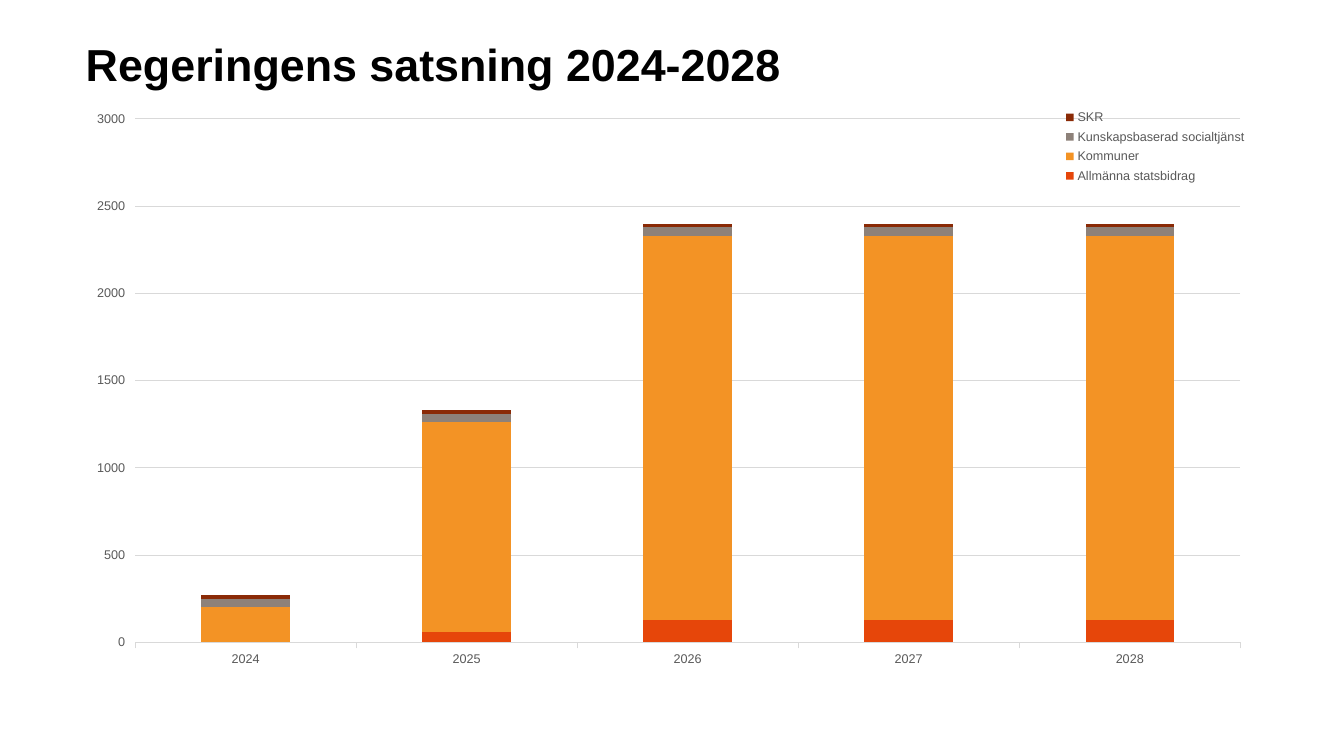
from lxml import etree
from pptx import Presentation
from pptx.chart.data import CategoryChartData
from pptx.dml.color import RGBColor
from pptx.enum.chart import XL_CHART_TYPE, XL_LEGEND_POSITION, XL_TICK_MARK
from pptx.enum.text import MSO_ANCHOR, MSO_AUTO_SIZE, PP_ALIGN
from pptx.oxml.ns import qn
from pptx.util import Inches, Pt

YEARS = ["2024", "2025", "2026", "2027", "2028"]
FUNDING = [
    ("Allmänna statsbidrag", "E6460A", [None, 60, 130, 130, 130]),
    ("Kommuner ", "F39325", [200, 1200, 2200, 2200, 2200]),
    ("Kunskapsbaserad socialtjänst", "8D8179", [50] * 5),
    ("SKR", "8A2A06", [20] * 5),
]


def rgb(color):
    return RGBColor.from_string(color)


def set_layout(owner, x, y, w, h, inner=False):
    """Place a plot area or legend by fractions of the chart's size."""
    layout = owner.find(qn("c:layout"))
    if layout is None:
        layout = etree.Element(qn("c:layout"))
        if inner:
            owner.insert(0, layout)
        else:
            owner.find(qn("c:legendPos")).addnext(layout)
    manual = etree.SubElement(layout, qn("c:manualLayout"))
    settings = [("layoutTarget", "inner")] if inner else []
    settings += [("xMode", "edge"), ("yMode", "edge"),
                 ("x", x), ("y", y), ("w", w), ("h", h)]
    for tag, value in settings:
        etree.SubElement(manual, qn(f"c:{tag}")).set("val", str(value))


class SlideBuilder:
    FONT = "Arial"
    INK = "000000"
    LABEL = "595959"
    RULE = "D9D9D9"

    def __init__(self, deck):
        self.slide = deck.slides.add_slide(deck.slide_layouts[5])

    def style_font(self, font, size, color, bold=False):
        font.name, font.size, font.bold = self.FONT, Pt(size), bold
        font.color.rgb = rgb(color)

    def style_rule(self, line):
        line.color.rgb = rgb(self.RULE)
        line.width = Pt(0.75)

    def title(self, text, left, top, width, height):
        heading = self.slide.shapes.title
        heading.left, heading.top = Inches(left), Inches(top)
        heading.width, heading.height = Inches(width), Inches(height)
        frame = heading.text_frame
        frame.text = text
        frame.word_wrap = True
        frame.auto_size = MSO_AUTO_SIZE.NONE
        frame.vertical_anchor = MSO_ANCHOR.TOP
        paragraph = frame.paragraphs[0]
        paragraph.alignment = PP_ALIGN.LEFT
        paragraph.line_spacing = 0.95
        self.style_font(paragraph.font, 32, self.INK, bold=True)

    def stacked_columns(self, categories, series, left, top, width, height):
        data = CategoryChartData()
        data.categories = categories
        for name, _, values in series:
            data.add_series(name, values)
        chart = self.slide.shapes.add_chart(
            XL_CHART_TYPE.COLUMN_STACKED, Inches(left), Inches(top),
            Inches(width), Inches(height), data).chart
        chart.has_title = False
        self.style_font(chart.font, 10, self.INK)

        plot = chart.plots[0]
        plot.gap_width, plot.overlap = 150, 100
        plot.vary_by_categories = False
        for bars, (_, color, _) in zip(plot.series, series):
            bars.format.fill.solid()
            bars.format.fill.fore_color.rgb = rgb(color)

        years, amounts = chart.category_axis, chart.value_axis
        for axis in (years, amounts):
            self.style_font(axis.tick_labels.font, 9, self.LABEL)
            axis.major_tick_mark = XL_TICK_MARK.OUTSIDE
        self.style_rule(years.format.line)
        amounts.format.line.fill.background()
        amounts.minimum_scale, amounts.maximum_scale = 0, 3000
        amounts.major_unit = 500
        amounts.has_major_gridlines = True
        self.style_rule(amounts.major_gridlines.format.line)

        chart.has_legend = True
        legend = chart.legend
        legend.position = XL_LEGEND_POSITION.RIGHT
        legend.include_in_layout = False
        self.style_font(legend.font, 9, self.LABEL)

        plot_area = next(chart.element.iter(qn("c:plotArea")))
        set_layout(plot_area, 0.039, 0.063, 0.949, 0.885, inner=True)
        legend_area = next(chart.element.iter(qn("c:legend")))
        set_layout(legend_area, 0.83, 0.04, 0.17, 0.14)


def main():
    deck = Presentation()
    deck.slide_width, deck.slide_height = Inches(13.33), Inches(7.5)
    builder = SlideBuilder(deck)
    builder.title("Regeringens satsning 2024-2028", 0.75, 0.35, 10.51, 1.35)
    builder.stacked_columns(YEARS, FUNDING, 0.89, 0.81, 11.55, 5.87)
    deck.save("out.pptx")


if __name__ == "__main__":
    main()
